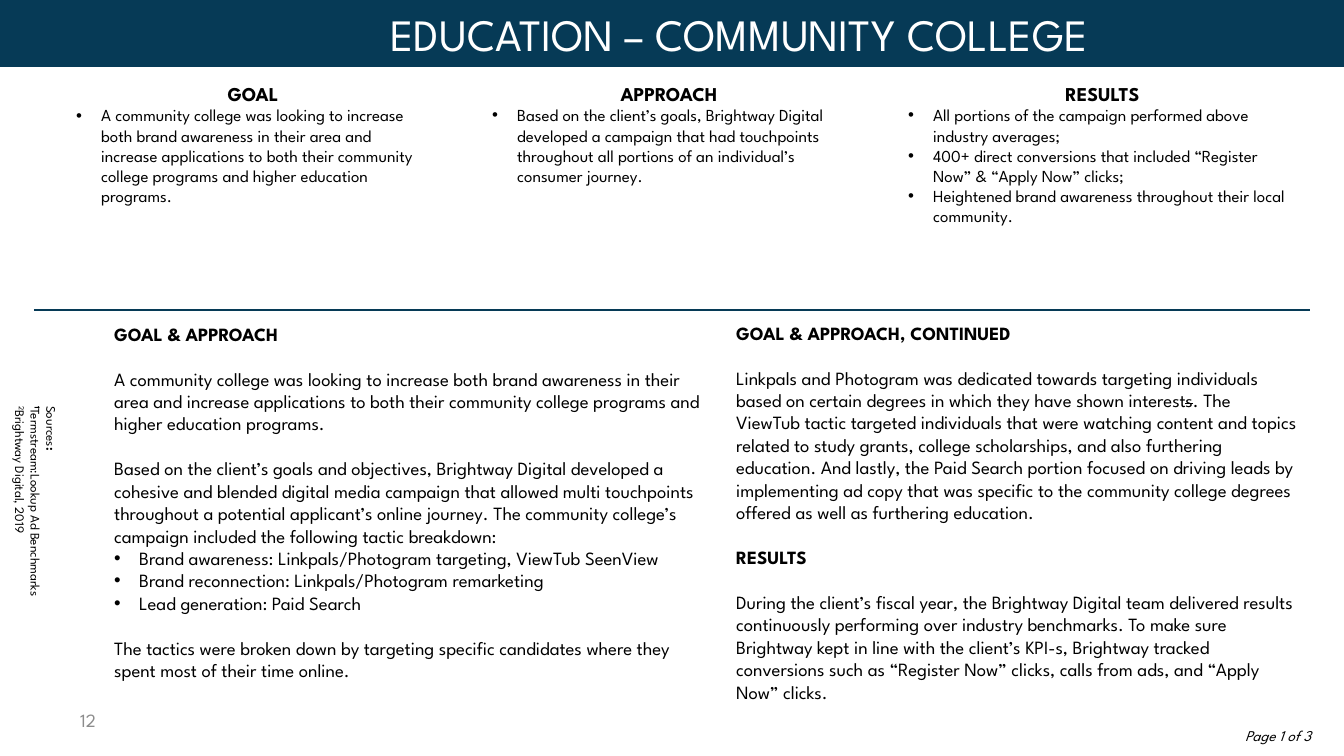
from lxml import etree
from pptx import Presentation
from pptx.dml.color import RGBColor
from pptx.enum.shapes import MSO_CONNECTOR
from pptx.enum.text import MSO_ANCHOR, MSO_AUTO_SIZE, PP_ALIGN
from pptx.oxml.ns import qn
from pptx.util import Pt

EMU_PER_PX = 914400 / 134.4
TITLE_ONLY = 5
STRAIGHT = MSO_CONNECTOR.STRAIGHT
TOP, MIDDLE = MSO_ANCHOR.TOP, MSO_ANCHOR.MIDDLE
LEFT, CENTER = PP_ALIGN.LEFT, PP_ALIGN.CENTER
NO_AUTOFIT = MSO_AUTO_SIZE.NONE

FONT = "League Spartan"
NAVY, BLACK, WHITE, GREY = "063A56", "000000", "FFFFFF", "8C8C8C"
BULLET_INDENT = 25

SUMMARIES = [
    ((63, 75, 380, 164), "GOAL", [
        "A community college was looking to increase both brand awareness in their area and increase "
        "applications to both their community college programs and higher education programs."]),
    ((479, 75, 380, 118), "APPROACH", [
        "Based on the client’s goals, Brightway Digital developed a campaign that had touchpoints "
        "throughout all portions of an individual’s consumer journey."]),
    ((895, 75, 415, 160), "RESULTS", [
        "All portions of the campaign performed above industry averages;",
        "400+ direct conversions that included “Register Now” & “Apply Now” clicks;",
        "Heightened brand awareness throughout their local community."]),
]

STORY_START = [
    ("heading", ["GOAL & APPROACH"]),
    ("body", ["A community college was looking to increase both brand awareness in their area and increase "
              "applications to both their community college programs and higher education programs."]),
    ("body", ["Based on the client’s goals and objectives, Brightway Digital developed a cohesive and blended "
              "digital media campaign that allowed multi touchpoints throughout a potential applicant’s online "
              "journey. The community college’s campaign included the following tactic breakdown:"]),
    ("bullet", ["Brand awareness: Linkpals/Photogram targeting, ViewTub SeenView"]),
    ("bullet", ["Brand reconnection: Linkpals/Photogram remarketing"]),
    ("bullet", ["Lead generation: Paid Search"]),
    ("body", ["The tactics were broken down by targeting specific candidates where they spent most of their "
              "time online."]),
]

STORY_END = [
    ("heading", ["GOAL & APPROACH, CONTINUED"]),
    ("body", ["Linkpals and Photogram was dedicated towards targeting individuals based on certain degrees in "
              "which they have shown interest",
              ("s", {"strike": "sngStrike"}),
              ". The ViewTub tactic targeted individuals that were watching content and topics related to study "
              "grants, college scholarships, and also furthering education. And lastly, the Paid Search portion "
              "focused on driving leads by implementing ad copy that was specific to the community college "
              "degrees offered as well as furthering education."]),
    ("heading", ["RESULTS"]),
    ("body", ["During the client’s fiscal year, the Brightway Digital team delivered results continuously "
              "performing over industry benchmarks. To make sure Brightway kept in line with the client’s "
              "KPI-s, Brightway tracked conversions such as “Register Now” clicks, calls from ads, and "
              "“Apply Now” clicks."]),
]

SUPERSCRIPT = {"baseline": "30000"}
SOURCES = [
    ("body", ["Sources", (":", {"b": "1"})]),
    ("body", [("1", {"b": "1", **SUPERSCRIPT}), "Termstream:Lookup Ad Benchmarks"]),
    ("body", [("2", SUPERSCRIPT), "Brightway Digital, 2019"]),
]


def px(length):
    return round(length * EMU_PER_PX)


def rgb(color):
    return RGBColor.from_string(color)


def format_run(run, size, color=BLACK, bold=False, italic=False):
    font = run.font
    font.name, font.size, font.bold, font.italic = FONT, Pt(size), bold, italic
    font.color.rgb = rgb(color)


def add_bullet(paragraph):
    properties = paragraph._p.get_or_add_pPr()
    properties.set("marL", str(px(BULLET_INDENT)))
    properties.set("indent", str(-px(BULLET_INDENT)))
    etree.SubElement(properties, qn("a:buFont")).set("typeface", "Arial")
    etree.SubElement(properties, qn("a:buChar")).set("char", "•")


def add_text_box(slide, box, wrap=True):
    text_box = slide.shapes.add_textbox(*map(px, box))
    text_box.text_frame.word_wrap = wrap
    return text_box


def write_paragraphs(frame, paragraphs, size, heading_size=None, heading_align=LEFT, gap=0):
    """Fill the frame; gap is the space in points before all but bullets."""
    for index, (role, parts) in enumerate(paragraphs):
        paragraph = frame.add_paragraph() if index else frame.paragraphs[0]
        is_heading = role == "heading"
        paragraph.alignment = heading_align if is_heading else LEFT
        if index and role != "bullet":
            paragraph.space_before = Pt(gap)
        if role == "bullet":
            add_bullet(paragraph)
        for part in parts:
            text, attributes = (part, {}) if isinstance(part, str) else part
            run = paragraph.add_run()
            run.text = text
            format_run(run, heading_size if is_heading else size, bold=is_heading)
            for name, value in attributes.items():
                run.font._element.set(name, value)


def add_banner(slide, box, text):
    title = slide.shapes.title
    title.left, title.top, title.width, title.height = map(px, box)
    title.fill.solid()
    title.fill.fore_color.rgb = rgb(NAVY)
    frame = title.text_frame
    frame.text = text
    frame.auto_size = NO_AUTOFIT
    frame.vertical_anchor = TOP
    frame.margin_left = px(148)
    frame.paragraphs[0].alignment = CENTER
    format_run(frame.paragraphs[0].runs[0], 24, WHITE)


def add_summary(slide, box, heading, points):
    paragraphs = [("heading", [heading])] + [("bullet", [point]) for point in points]
    frame = add_text_box(slide, box).text_frame
    write_paragraphs(frame, paragraphs, 9, heading_size=10.5, heading_align=CENTER)


def add_story(slide, box, paragraphs):
    frame = add_text_box(slide, box).text_frame
    write_paragraphs(frame, paragraphs, 10, heading_size=10, gap=12)


def add_divider(slide, left, right, y):
    divider = slide.shapes.add_connector(STRAIGHT, px(left), px(y), px(right), px(y))
    divider.line.color.rgb = rgb(NAVY)
    divider.line.width = Pt(1.5)
    etree.SubElement(divider._element.spPr, qn("a:effectLst"))


def add_sources(slide, box):
    sources = add_text_box(slide, box, wrap=False)
    sources.rotation = 90
    write_paragraphs(sources.text_frame, SOURCES, 7)


def add_label(slide, box, text, size, anchor=TOP, **style):
    frame = add_text_box(slide, box).text_frame
    frame.vertical_anchor = anchor
    frame.text = text
    format_run(frame.paragraphs[0].runs[0], size, **style)


def main():
    presentation = Presentation()
    presentation.slide_width, presentation.slide_height = px(1344), px(756)
    slide = presentation.slides.add_slide(presentation.slide_layouts[TITLE_ONLY])

    add_banner(slide, (0, 0, 1344, 67), "EDUCATION – COMMUNITY COLLEGE")
    for box, heading, points in SUMMARIES:
        add_summary(slide, box, heading, points)
    add_divider(slide, 34, 1310, 310)
    add_story(slide, (101, 316, 621, 421), STORY_START)
    add_story(slide, (723, 315, 587, 468), STORY_END)
    add_sources(slide, (-101, 500, 274, 60))
    add_label(slide, (67, 700, 313, 40), "12", 10, anchor=MIDDLE, color=GREY)
    add_label(slide, (1232, 720, 112, 32), "Page 1 of 3", 8, italic=True)

    presentation.save("out.pptx")


if __name__ == "__main__":
    main()
